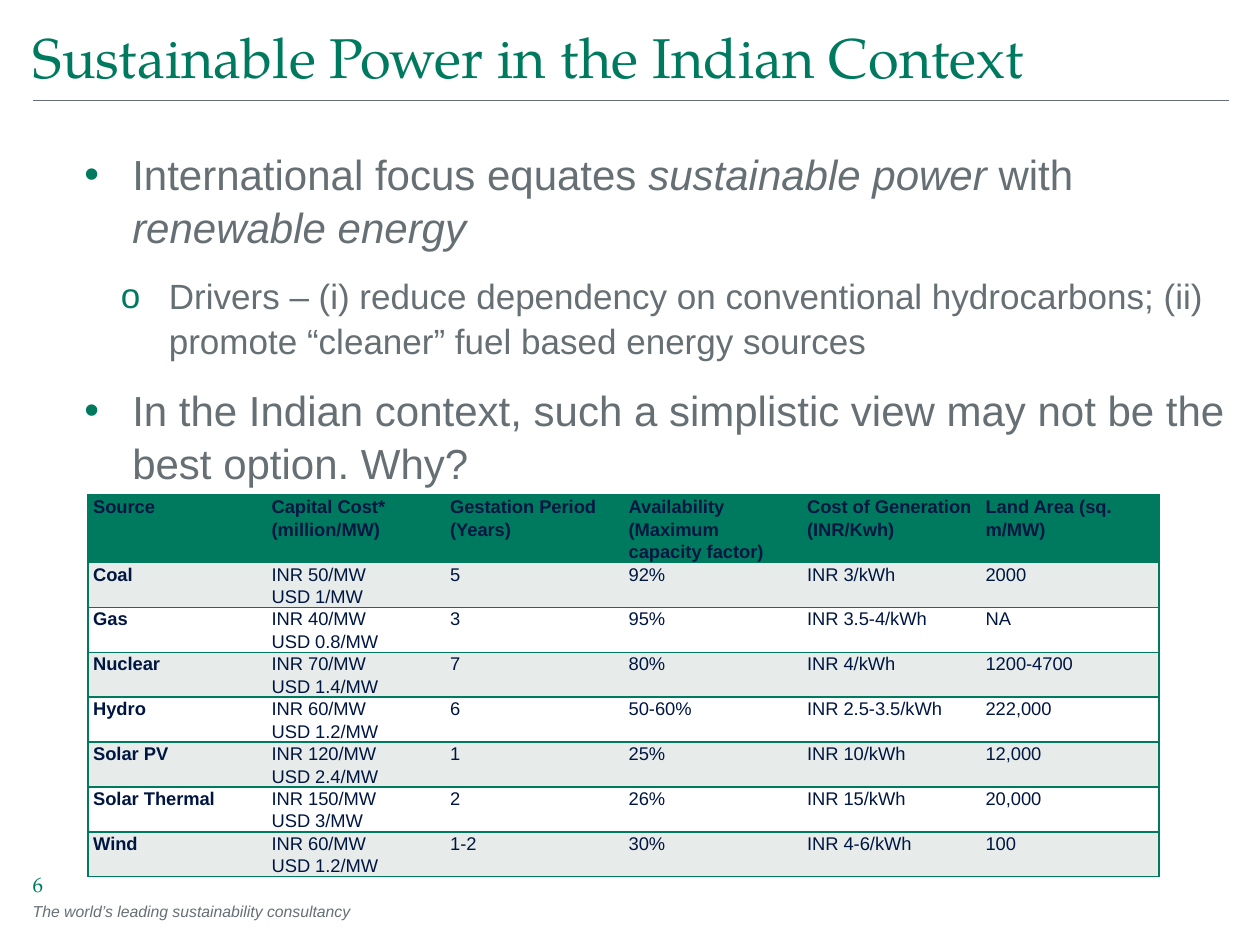
from typing import NamedTuple

from lxml.etree import SubElement
from pptx import Presentation
from pptx.dml.color import RGBColor
from pptx.enum.shapes import MSO_CONNECTOR
from pptx.enum.text import MSO_ANCHOR, MSO_AUTO_SIZE, PP_ALIGN
from pptx.oxml.ns import qn
from pptx.util import Emu, Inches, Pt

COLORS = {"green": "007A5F", "grey": "666F74", "navy": "001642", "band": "E7ECEA", "white": "FFFFFF"}
SANS, SERIF = "Arial", "TeX Gyre Pagella"
SLIDE_W, SLIDE_H = Inches(10), Inches(7.5)


class Box(NamedTuple):
    """Left, top, width and height in percent of the slide."""
    left: float
    top: float
    width: float
    height: float

    def emu(self) -> tuple:
        sides = (SLIDE_W, SLIDE_H, SLIDE_W, SLIDE_H)
        return tuple(Emu(round(share * side / 100)) for share, side in zip(self, sides))


class Point(NamedTuple):
    text: str
    size: float
    mark: str
    indent: float


class Source(NamedTuple):
    name: str
    capital_cost: str
    gestation: str
    availability: str
    generation_cost: str
    land: str


TITLE_BOX = Box(2.6, 2.4, 94.9, 8)
RULE_BOX = Box(2.6, 10.67, 94.9, 0)
BODY_BOX = Box(6.7, 15.47, 90.8, 69.87)
TABLE_BOX = Box(7, 52.4, 85, 42.53)
NUMBER_BOX = Box(2.6, 89.47, 11.6, 5.47)
TAGLINE_BOX = Box(2.6, 94.8, 49.1, 3.33)

# Underscores enclose italic words.
POINTS = [
    Point("International focus equates _sustainable power_ with _renewable energy_", 24, "•", 0.38),
    Point("Drivers – (i) reduce dependency on conventional hydrocarbons; (ii) promote "
          "“cleaner” fuel based energy sources", 20, "o", 0.67),
    Point("In the Indian context, such a simplistic view may not be the best option. Why?", 24, "•", 0.38),
]
SOURCES = [
    Source("Source", "Capital Cost*\n(million/MW)", "Gestation Period (Years)",
           "Availability (Maximum capacity factor)", "Cost of Generation (INR/Kwh)", "Land Area (sq. m/MW)"),
    Source("Coal", "INR 50/MW\nUSD 1/MW", "5", "92%", "INR 3/kWh", "2000"),
    Source("Gas", "INR 40/MW\nUSD 0.8/MW", "3", "95%", "INR 3.5-4/kWh", "NA"),
    Source("Nuclear", "INR 70/MW\nUSD 1.4/MW", "7", "80%", "INR 4/kWh", "1200-4700"),
    Source("Hydro", "INR 60/MW\nUSD 1.2/MW", "6", "50-60%", "INR 2.5-3.5/kWh", "222,000"),
    Source("Solar PV", "INR 120/MW\nUSD 2.4/MW", "1", "25%", "INR 10/kWh", "12,000"),
    Source("Solar Thermal", "INR 150/MW\nUSD 3/MW", "2", "26%", "INR 15/kWh", "20,000"),
    Source("Wind", "INR 60/MW\nUSD 1.2/MW", "1-2", "30%", "INR 4-6/kWh", "100"),
]


def rgb(color: str) -> RGBColor:
    return RGBColor.from_string(COLORS[color])


def add_bullet(paragraph, mark: str, indent: float) -> None:
    props = paragraph._p.get_or_add_pPr()
    props.set("marL", str(Inches(indent)))
    props.set("indent", str(-Inches(0.38)))
    SubElement(SubElement(props, qn("a:buClr")), qn("a:srgbClr"), val=COLORS["green"])
    SubElement(props, qn("a:buFont"), typeface=SANS)
    SubElement(props, qn("a:buChar"), char=mark)


def write(paragraph, text: str, *, size: float, color: str, font: str = SANS, bold: bool = False,
          italic: bool = False, spacing: float = 1.0, before: float = 0) -> None:
    paragraph.alignment = PP_ALIGN.LEFT
    paragraph.line_spacing = spacing
    paragraph.space_before = Pt(before)
    for index, part in enumerate(text.split("_")):
        if not part:
            continue
        run = paragraph.add_run()
        run.text = part
        run.font.name, run.font.size = font, Pt(size)
        run.font.bold, run.font.italic = bold, italic or index % 2 == 1
        run.font.color.rgb = rgb(color)


def set_frame(frame, top: float = 0, bottom: float = 0, anchor=MSO_ANCHOR.TOP):
    frame.word_wrap = True
    frame.auto_size = MSO_AUTO_SIZE.NONE
    frame.margin_left = frame.margin_right = 0
    frame.margin_top, frame.margin_bottom = Inches(top), Inches(bottom)
    frame.vertical_anchor = anchor
    return frame


def add_frame(slide, box: Box, **layout):
    return set_frame(slide.shapes.add_textbox(*box.emu()).text_frame, **layout)


def add_title(slide, text: str) -> None:
    title = slide.shapes.title
    title.left, title.top, title.width, title.height = TITLE_BOX.emu()
    frame = set_frame(title.text_frame, bottom=0.05)
    write(frame.paragraphs[0], text, size=32, color="green", font=SERIF)


def add_rule(slide) -> None:
    left, top, width, _ = RULE_BOX.emu()
    rule = slide.shapes.add_connector(MSO_CONNECTOR.STRAIGHT, left, top, left + width, top)
    rule.line.color.rgb = rgb("grey")
    rule.line.width = Pt(0.5)
    SubElement(rule._element.spPr, qn("a:effectLst"))


def add_points(slide, points: list[Point]) -> None:
    frame = add_frame(slide, BODY_BOX, bottom=0.05)
    for index, point in enumerate(points):
        paragraph = frame.add_paragraph() if index else frame.paragraphs[0]
        add_bullet(paragraph, point.mark, point.indent)
        write(paragraph, point.text, size=point.size, color="grey", spacing=1.05,
              before=12 if index else 0)


def set_borders(cell, visible: str) -> None:
    """Draw the sides named in visible (L, R, T, B) and clear the others."""
    props = cell._tc.get_or_add_tcPr()
    for side in "LRTB":
        line = SubElement(props, qn(f"a:ln{side}"), w=str(Pt(1)))
        if side in visible:
            SubElement(SubElement(line, qn("a:solidFill")), qn("a:srgbClr"), val=COLORS["green"])
        else:
            SubElement(line, qn("a:noFill"))


def fill_cell(cell, text: str, fill: str, bold: bool, borders: str) -> None:
    set_borders(cell, borders)
    cell.fill.solid()
    cell.fill.fore_color.rgb = rgb(fill)
    cell.margin_left = cell.margin_right = Inches(0.04)
    cell.margin_top = cell.margin_bottom = 0
    frame = cell.text_frame
    for index, line in enumerate(text.split("\n")):
        paragraph = frame.add_paragraph() if index else frame.paragraphs[0]
        write(paragraph, line, size=10.5, color="navy", bold=bold, spacing=1.1)


def add_source_table(slide, sources: list[Source]) -> None:
    last = len(Source._fields) - 1
    holder = slide.shapes.add_table(len(sources), last + 1, *TABLE_BOX.emu())
    table = holder.table
    table.horz_banding = False
    for r, source in enumerate(sources):
        table.rows[r].height = Inches(0.17)
        fill = "green" if r == 0 else ("band" if r % 2 else "white")
        for c, text in enumerate(source):
            borders = "TB" + ("L" if c == 0 else "") + ("R" if c == last else "")
            fill_cell(table.cell(r, c), text, fill, r == 0 or c == 0, borders)
    holder.height = TABLE_BOX.emu()[3]


def main() -> None:
    deck = Presentation()
    deck.slide_width, deck.slide_height = SLIDE_W, SLIDE_H
    slide = deck.slides.add_slide(deck.slide_layouts[5])
    add_rule(slide)
    tagline = add_frame(slide, TAGLINE_BOX, top=0.05, bottom=0.05)
    write(tagline.paragraphs[0], "The world’s leading sustainability consultancy",
          size=9, color="grey", italic=True)
    add_source_table(slide, SOURCES)
    add_title(slide, "Sustainable Power in the Indian Context")
    number = add_frame(slide, NUMBER_BOX, anchor=MSO_ANCHOR.BOTTOM)
    write(number.paragraphs[0], "6", size=12, color="green", font=SERIF)
    add_points(slide, POINTS)
    deck.save("out.pptx")


if __name__ == "__main__":
    main()
